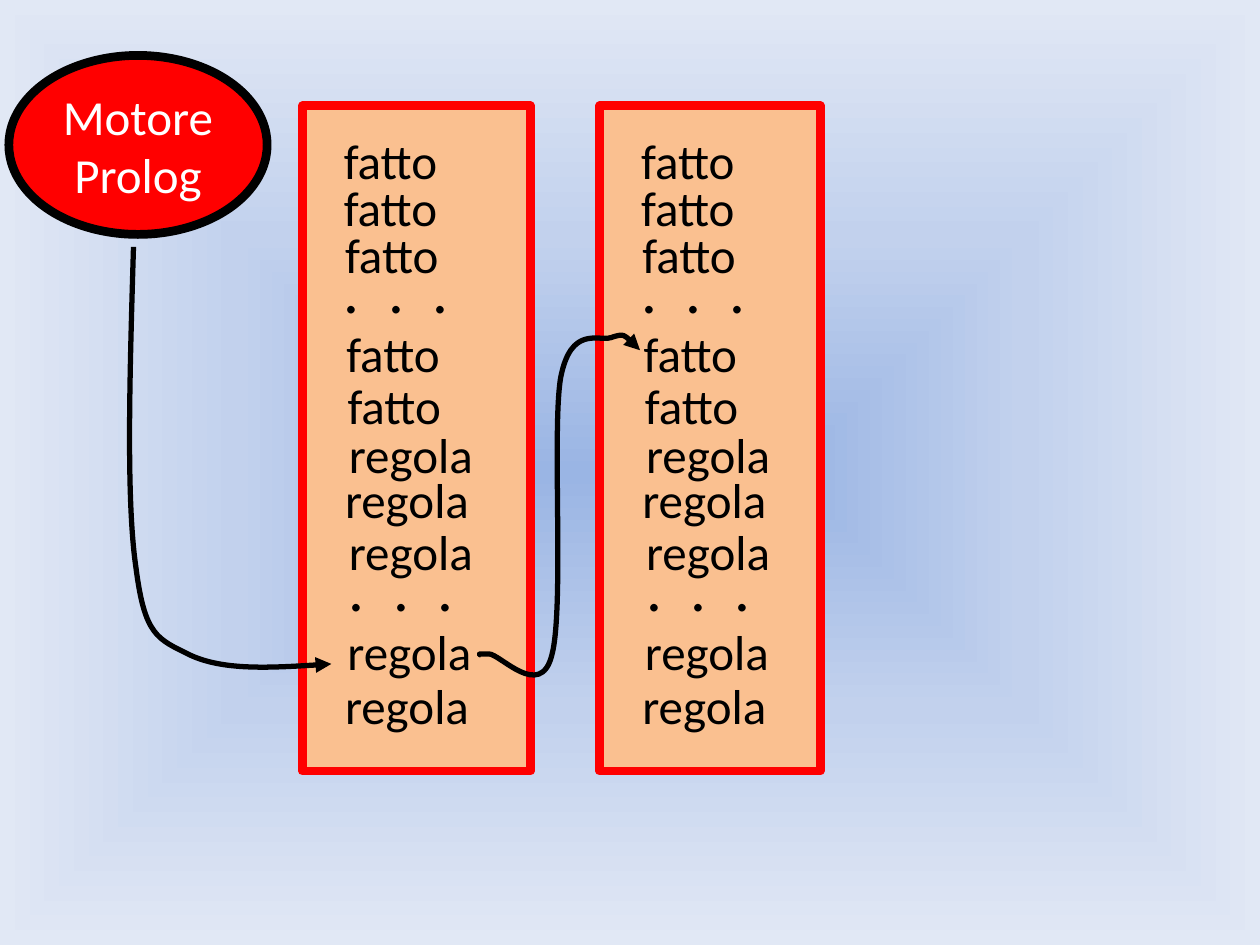
from lxml.etree import SubElement
from pptx import Presentation
from pptx.dml.color import RGBColor
from pptx.enum.shapes import MSO_SHAPE
from pptx.enum.text import MSO_ANCHOR, MSO_AUTO_SIZE, PP_ALIGN
from pptx.oxml.ns import qn
from pptx.util import Inches, Pt

COLUMNS, ROWS = 100, 75
PANEL_TOP, PANEL_HEIGHT = 8.4, 52.8
PANELS = [(24, 18.1), (47.6, 17.5)]  # left, width
ENTRIES = [  # text, indent from the panel's left edge, top
    ("fatto", 2.3, 9.9),
    ("fatto", 2.3, 13.6),
    ("fatto", 2.4, 17.3),
    (".  .  .", 2.3, 19.4),
    ("fatto", 2.5, 25.2),
    ("fatto", 2.6, 29.3),
    ("regola", 2.7, 33.2),
    ("regola", 2.4, 36.8),
    ("regola", 2.7, 40.9),
    (".  .  .", 2.7, 43),
    ("regola", 2.6, 48.8),
    ("regola", 2.4, 53.1),
]
# Width, height and font size of each kind of entry
ENTRY_SIZES = {
    "fatto": (11.8, 5.7, 28),
    "regola": (13.4, 5.7, 28),
    ".  .  .": (11.8, 7.1, 36),
}
# Start point, then two control points and an end point per curve
ENGINE_TO_RULE = [
    (10.6, 19.6),
    (10.3, 29.7), (10, 39.7), (10.8, 45.1),
    (11.5, 50.5), (12.5, 50.7), (15.1, 52),
    (17.7, 53.2), (22, 53), (26.3, 52.7),
]
RULE_TO_FACT = [
    (38.2, 52),
    (38, 51.9), (37.8, 51.9), (38.8, 51.9),
    (39.7, 51.9), (42.9, 55.6), (43.8, 52),
    (44.8, 48.3), (43.8, 34.2), (44.5, 30),
    (45.3, 25.8), (47.5, 27.1), (48.5, 26.8),
    (49.6, 26.4), (50.2, 27.1), (50.8, 27.8),
]


def color(hex_code):
    return RGBColor.from_string(hex_code)


class SlideBuilder:
    font_name = "Calibri"
    ink = "000000"
    accent = "FF0000"
    panel_fill = "FAC090"
    border = 5
    arrow_width = 3

    def __init__(self, presentation):
        self.column = presentation.slide_width / COLUMNS
        self.row = presentation.slide_height / ROWS
        self.slide = presentation.slides.add_slide(presentation.slide_layouts[6])

    def place(self, x, y):
        """Turn grid columns and rows into slide lengths."""
        return round(x * self.column), round(y * self.row)

    def background(self, stops):
        """Fill the slide with a gradient that spreads from its centre."""
        self.slide.background.fill.gradient()
        gradient = self.slide.element.find(".//" + qn("a:gradFill"))
        for part in list(gradient):
            gradient.remove(part)
        stop_list = SubElement(gradient, qn("a:gsLst"))
        for percent, hex_code in stops:
            stop = SubElement(stop_list, qn("a:gs"), pos=str(percent * 1000))
            SubElement(stop, qn("a:srgbClr"), val=hex_code)
        spread = SubElement(gradient, qn("a:path"), {"path": "shape"})
        SubElement(spread, qn("a:fillToRect"),
                   dict.fromkeys(("l", "t", "r", "b"), "50000"))

    def shape(self, kind, left, top, width, height, fill, outline):
        shape = self.slide.shapes.add_shape(
            kind, *self.place(left, top), *self.place(width, height))
        shape.shadow.inherit = False
        shape.fill.solid()
        shape.fill.fore_color.rgb = color(fill)
        shape.line.color.rgb = color(outline)
        shape.line.width = Pt(self.border)
        return shape

    def label(self, frame, text, size, hex_code):
        frame.word_wrap = True
        paragraph = frame.paragraphs[0]
        paragraph.text = text
        paragraph.font.name = self.font_name
        paragraph.font.size = Pt(size)
        paragraph.font.color.rgb = color(hex_code)
        return paragraph

    def engine(self, text, left, top, width, height):
        oval = self.shape(MSO_SHAPE.OVAL, left, top, width, height,
                          self.accent, self.ink)
        oval.text_frame.vertical_anchor = MSO_ANCHOR.MIDDLE
        caption = self.label(oval.text_frame, text, 28, "FFFFFF")
        caption.alignment = PP_ALIGN.CENTER

    def entry(self, text, left, top):
        width, height, size = ENTRY_SIZES[text]
        box = self.slide.shapes.add_textbox(
            *self.place(left, top), *self.place(width, height))
        self.label(box.text_frame, text, size, self.ink)
        box.text_frame.auto_size = MSO_AUTO_SIZE.SHAPE_TO_FIT_TEXT

    def panel(self, left, width):
        self.shape(MSO_SHAPE.RECTANGLE, left, PANEL_TOP, width, PANEL_HEIGHT,
                   self.panel_fill, self.accent)
        for text, indent, top in ENTRIES:
            self.entry(text, left + indent, top)

    def curved_arrow(self, points):
        """Draw Bézier curves through the points, with a head at the end."""
        start, *others = [self.place(*point) for point in points]
        builder = self.slide.shapes.build_freeform(*start)
        builder.add_line_segments(others, close=False)
        arrow = builder.convert_to_shape()
        arrow.shadow.inherit = False
        arrow.fill.background()
        arrow.line.color.rgb = color(self.ink)
        arrow.line.width = Pt(self.arrow_width)

        outline = arrow.element.find(".//" + qn("a:path"))
        segments = outline.findall(qn("a:lnTo"))
        for first in range(0, len(segments), 3):
            curve = SubElement(outline, qn("a:cubicBezTo"))
            for segment in segments[first:first + 3]:
                curve.append(segment[0])
                outline.remove(segment)
        line = arrow.element.spPr.find(qn("a:ln"))
        SubElement(line, qn("a:tailEnd"), type="triangle")


def main():
    presentation = Presentation()
    presentation.slide_width = Inches(10)
    presentation.slide_height = Inches(7.5)

    builder = SlideBuilder(presentation)
    builder.background([(0, "9AB5E4"), (50, "C2D1ED"), (100, "E1E8F5")])
    first_panel, second_panel = PANELS
    builder.panel(*first_panel)
    builder.engine("Motore Prolog", 0.7, 4.4, 20.5, 14.2)
    builder.panel(*second_panel)
    builder.curved_arrow(ENGINE_TO_RULE)
    builder.curved_arrow(RULE_TO_FACT)
    presentation.save("out.pptx")


if __name__ == "__main__":
    main()
